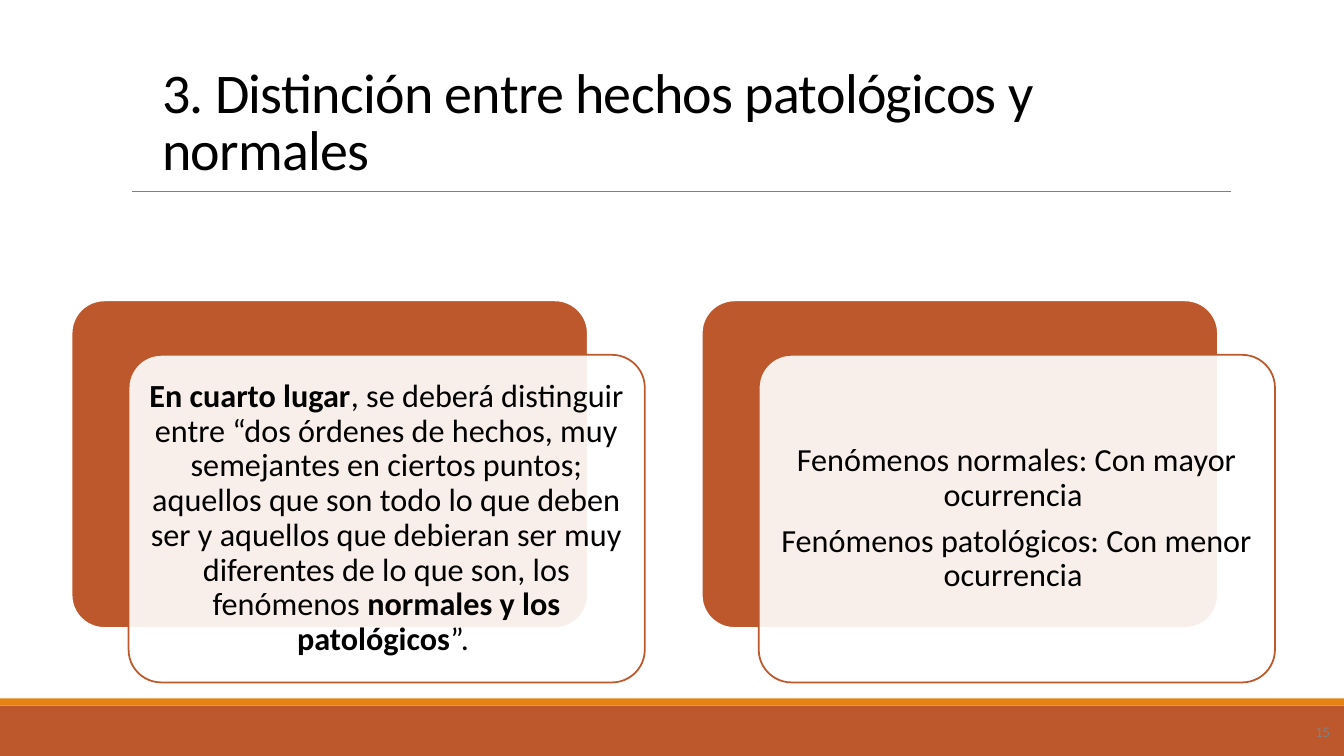
from lxml.etree import SubElement
from pptx import Presentation
from pptx.dml.color import RGBColor
from pptx.enum.shapes import MSO_CONNECTOR, MSO_SHAPE
from pptx.enum.text import MSO_ANCHOR, PP_ALIGN
from pptx.oxml.ns import qn
from pptx.util import Inches, Pt

COLORS = {
    "rust": "BD582C",
    "orange": "E48312",
    "white": "FFFFFF",
    "black": "000000",
    "gray": "808080",
}
FONT = "Calibri"
CARD_SIZE = (5.12, 3.25)
CARD_TOP = 2.98
CARD_LEFTS = (0.71, 6.96)
FRONT_OFFSET = (0.565, 0.54)
TEXT_MARGIN = 0.1

# Each paragraph is a list of (text, bold) runs
CARDS = [
    [[
        ("En cuarto lugar", True),
        (", se deberá distinguir entre “dos órdenes de hechos, muy semejantes "
         "en ciertos puntos; aquellos que son todo lo que deben ser y aquellos "
         "que debieran ser muy diferentes de lo que son, los fenómenos ", False),
        ("normales y los patológicos", True),
        ("”. ", False),
    ]],
    [
        [("Fenómenos normales: Con mayor ocurrencia ", False)],
        [("Fenómenos patológicos: Con menor ocurrencia ", False)],
    ],
]


def rgb(name):
    return RGBColor.from_string(COLORS[name])


def add_block(slide, kind, box, fill, line=None, opacity=None):
    block = slide.shapes.add_shape(kind, *map(Inches, box))
    block.shadow.inherit = False
    block.fill.solid()
    block.fill.fore_color.rgb = rgb(fill)
    if kind == MSO_SHAPE.ROUNDED_RECTANGLE:
        block.adjustments[0] = 0.1
    if line:
        block.line.color.rgb = rgb(line)
        block.line.width = Pt(1.25)
    else:
        block.line.fill.background()
    if opacity is not None:
        color = block.fill._xPr.find(qn("a:solidFill"))[0]
        SubElement(color, qn("a:alpha"), val=str(opacity * 1000))


def add_text(slide, box, paragraphs, size, color="black", align=PP_ALIGN.LEFT,
             spacing=1.0, after=0, margin_y=0.05, tracking=None):
    frame = slide.shapes.add_textbox(*map(Inches, box)).text_frame
    frame.word_wrap = True
    frame.vertical_anchor = MSO_ANCHOR.MIDDLE
    frame.margin_left = frame.margin_right = Inches(0.1)
    frame.margin_top = frame.margin_bottom = Inches(margin_y)
    for index, runs in enumerate(paragraphs):
        paragraph = frame.add_paragraph() if index else frame.paragraphs[0]
        paragraph.alignment = align
        paragraph.line_spacing = spacing
        paragraph.space_after = Pt(after)
        for text, bold in runs:
            run = paragraph.add_run()
            run.text = text
            run.font.name = FONT
            run.font.size = Pt(size)
            run.font.bold = bold
            run.font.color.rgb = rgb(color)
            if tracking is not None:
                run.font._element.set("spc", str(round(tracking * 100)))


def add_rule(slide, left, right, top):
    rule = slide.shapes.add_connector(
        MSO_CONNECTOR.STRAIGHT,
        Inches(left), Inches(top), Inches(right), Inches(top))
    rule.line.color.rgb = rgb("gray")
    rule.line.width = Pt(0.5)
    SubElement(rule._element.spPr, qn("a:effectLst"))


def add_card(slide, left, paragraphs):
    width, height = CARD_SIZE
    front_left = left + FRONT_OFFSET[0]
    front_top = CARD_TOP + FRONT_OFFSET[1]
    add_block(slide, MSO_SHAPE.ROUNDED_RECTANGLE,
              (left, CARD_TOP, width, height), "rust", line="white")
    add_block(slide, MSO_SHAPE.ROUNDED_RECTANGLE,
              (front_left, front_top, width, height), "white",
              line="rust", opacity=90)
    text_box = (front_left + TEXT_MARGIN, front_top + TEXT_MARGIN,
                width - 2 * TEXT_MARGIN, height - 2 * TEXT_MARGIN)
    add_text(slide, text_box, paragraphs, 23, align=PP_ALIGN.CENTER,
             spacing=0.9, after=8, margin_y=0.1)


def main():
    deck = Presentation()
    deck.slide_width, deck.slide_height = Inches(13.33), Inches(7.5)
    slide = deck.slides.add_slide(deck.slide_layouts[6])

    # Footer bands
    add_block(slide, MSO_SHAPE.RECTANGLE, (0, 7, 13.33, 0.5), "rust")
    add_block(slide, MSO_SHAPE.RECTANGLE, (0, 6.93, 13.33, 0.07), "orange")

    # Title and rule
    add_rule(slide, 1.31, 12.21, 1.9)
    title = "3. Distinción entre hechos patológicos y normales"
    add_text(slide, (1.51, 0.38, 10.63, 1.72), [[(title, False)]], 40,
             spacing=0.85, tracking=-0.5)

    # Cards
    for left, paragraphs in zip(CARD_LEFTS, CARDS):
        add_card(slide, left, paragraphs)

    # Slide number
    add_text(slide, (12.29, 7.06, 1, 0.4), [[("15", False)]], 10.5,
             color="gray", align=PP_ALIGN.RIGHT)

    deck.save("out.pptx")


if __name__ == "__main__":
    main()
